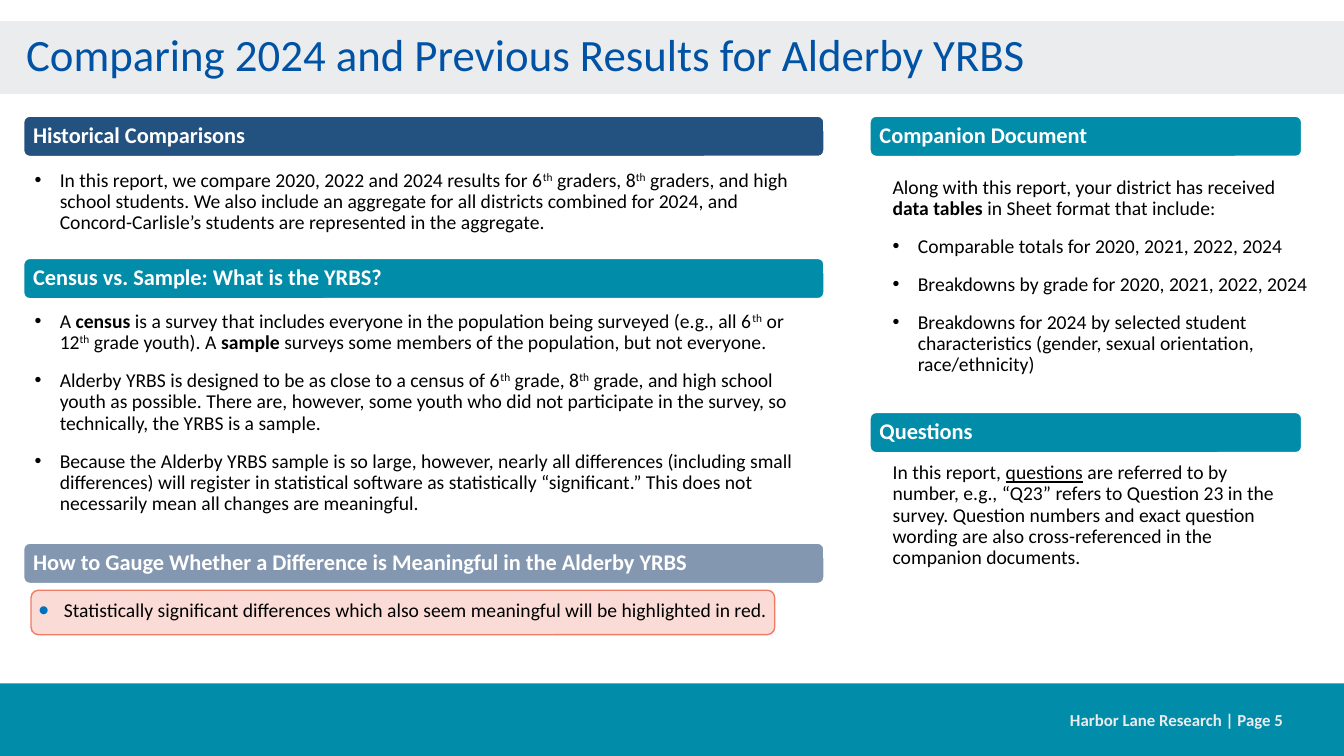
from lxml import etree
from pptx import Presentation
from pptx.dml.color import RGBColor
from pptx.enum.shapes import MSO_SHAPE
from pptx.enum.text import MSO_ANCHOR, PP_ALIGN
from pptx.oxml.ns import qn
from pptx.util import Pt

RECT, ROUND = MSO_SHAPE.RECTANGLE, MSO_SHAPE.ROUNDED_RECTANGLE
TOP, MIDDLE = MSO_ANCHOR.TOP, MSO_ANCHOR.MIDDLE
LEFT, RIGHT = PP_ALIGN.LEFT, PP_ALIGN.RIGHT

TEAL, NAVY, SLATE = "018CAA", "245280", "8497B0"
PALE, WHITE, BLACK = "EBECEE", "FFFFFF", "000000"
CORAL, BLUE, TITLE = "F17C65", "0070C0", "0052A5"
MARKS = {"*": {"bold": True}, "_": {"underline": True}, "^": {}}


def color(code):
    return RGBColor.from_string(code)


def apply(target, values):
    for name, value in values.items():
        setattr(target, name, value)


class Page:
    """Draws styled elements on one slide, with all lengths in points."""

    def __init__(self, slide, face):
        self.slide = slide
        self.face = face

    def shape(self, kind, box, fill, line=None, alpha=None):
        shape = self.slide.shapes.add_shape(kind, *map(Pt, box))
        shape.shadow.inherit = False
        shape.fill.solid()
        shape.fill.fore_color.rgb = color(fill)
        if alpha:
            tint = shape.fill._xPr.find(".//" + qn("a:srgbClr"))
            etree.SubElement(tint, qn("a:alpha"), val=str(alpha * 1000))
        if line:
            shape.line.color.rgb = color(line)
            shape.line.width = Pt(1)
        else:
            shape.line.fill.background()
        return shape

    def runs(self, para, text, size, ink, bold=False):
        for piece in text.split("~"):
            mark = piece[:1] if piece[:1] in MARKS else ""
            run = para.add_run()
            run.text = piece[len(mark):]
            apply(run.font, {"name": self.face, "size": Pt(size), "bold": bold,
                             **MARKS.get(mark, {})})
            run.font.color.rgb = color(ink)
            if mark == "^":
                run._r.get_or_add_rPr().set("baseline", "30000")

    def label(self, box, text, size, ink, bold=False, align=LEFT):
        frame = self.slide.shapes.add_textbox(*map(Pt, box)).text_frame
        apply(frame, {"word_wrap": True, "vertical_anchor": MIDDLE})
        para = frame.paragraphs[0]
        apply(para, {"alignment": align, "line_spacing": 0.9})
        self.runs(para, text, size, ink, bold)

    def header(self, box, text, fill):
        shape = self.shape(ROUND, box, fill, WHITE)
        shape.adjustments[0] = 0.15
        frame = shape.text_frame
        apply(frame, {"word_wrap": True, "vertical_anchor": MIDDLE,
                      "margin_left": Pt(5.5), "margin_right": Pt(5.5),
                      "margin_top": 0, "margin_bottom": 0})
        para = frame.paragraphs[0]
        apply(para, {"alignment": LEFT, "line_spacing": 0.85})
        self.runs(para, text, 16, WHITE, True)

    def bullet(self, para, ink=None, scale=None):
        props = para._p.get_or_add_pPr()
        apply_to = {"marL": Pt(27), "indent": -Pt(18)}
        for name, value in apply_to.items():
            props.set(name, str(value))
        if ink:
            tint = etree.SubElement(props, qn("a:buClr"))
            etree.SubElement(tint, qn("a:srgbClr"), val=ink)
        if scale:
            etree.SubElement(props, qn("a:buSzPct"), val=str(scale * 1000))
        etree.SubElement(props, qn("a:buFont"), typeface="Arial")
        etree.SubElement(props, qn("a:buChar"), char="•")

    def body(self, box, items, intro=None, ink=None, scale=None):
        frame = self.slide.shapes.add_textbox(*map(Pt, box)).text_frame
        apply(frame, {"word_wrap": True, "vertical_anchor": TOP})
        texts = ([intro] if intro else []) + items
        for index, text in enumerate(texts):
            para = frame.add_paragraph() if index else frame.paragraphs[0]
            if intro and not index:
                para._p.get_or_add_pPr().set("marL", str(Pt(9)))
            else:
                self.bullet(para, ink, scale)
            apply(para, {"line_spacing": 0.9,
                         "space_before": Pt(12 if index else 0)})
            self.runs(para, text, 14, BLACK)


def main():
    deck = Presentation()
    apply(deck, {"slide_width": Pt(960), "slide_height": Pt(540)})
    page = Page(deck.slides.add_slide(deck.slide_layouts[6]), "Calibri")

    for top, fill in ((15.2, PALE), (488.2, TEAL)):
        page.shape(RECT, (0, top, 960, 52), fill)
    page.label((11.5, 17.3, 934.5, 47.5),
               "Comparing 2024 and Previous Results for Alderby YRBS", 32, TITLE)
    page.label((735, 500.5, 188.7, 29),
               "Harbor Lane Research | Page 5", 12, PALE, True, RIGHT)

    wide, side = (16.9, 571.7), (621.5, 308.3)
    for (left, width), top, text, fill in (
        (wide, 83, "Historical Comparisons", NAVY),
        (wide, 184.6, "Census vs. Sample: What is the YRBS?", TEAL),
        (wide, 388, "How to Gauge Whether a Difference is Meaningful "
                    "in the Alderby YRBS", SLATE),
        (side, 83, "Companion Document", TEAL),
        (side, 294.6, "Questions", TEAL),
    ):
        page.header((left, top, width, 28.8), text, fill)

    page.body((8.6, 118, 580, 58), [
        "In this report, we compare 2020, 2022 and 2024 results for 6~^th~ "
        "graders, 8~^th~ graders, and high school students. We also include "
        "an aggregate for all districts combined for 2024, and "
        "Concord-Carlisle’s students are represented in the aggregate."])
    page.body((8.6, 219, 574.6, 160), [
        "A ~*census~ is a survey that includes everyone in the population "
        "being surveyed (e.g., all 6~^th~ or 12~^th~ grade youth). A "
        "~*sample~ surveys some members of the population, but not everyone.",
        "Alderby YRBS is designed to be as close to a census of 6~^th~ grade, "
        "8~^th~ grade, and high school youth as possible. There are, however, "
        "some youth who did not participate in the survey, so technically, "
        "the YRBS is a sample.",
        "Because the Alderby YRBS sample is so large, however, nearly all "
        "differences (including small differences) will register in "
        "statistical software as statistically “significant.” This does not "
        "necessarily mean all changes are meaningful."])

    page.shape(ROUND, (22.2, 421.6, 531.2, 31.8), CORAL, CORAL, 27)
    page.body((11.5, 425.5, 556.5, 30), [
        "Statistically significant differences which also seem meaningful "
        "will be highlighted in red."], ink=BLUE, scale=150)

    page.body((621.5, 123, 324.5, 165), [
        "Comparable totals for 2020, 2021, 2022, 2024",
        "Breakdowns by grade for 2020, 2021, 2022, 2024",
        "Breakdowns for 2024 by selected student characteristics (gender, "
        "sexual orientation, race/ethnicity)"],
        "Along with this report, your district has received ~*data tables ~"
        "in Sheet format that include:")
    page.body((621.5, 327, 302.5, 90), [],
              "In this report, ~_questions~ are referred to by number, e.g., "
              "“Q23” refers to Question 23 in the survey. Question numbers "
              "and exact question wording are also cross-referenced in the "
              "companion documents.")
    deck.save("out.pptx")


if __name__ == "__main__":
    main()
